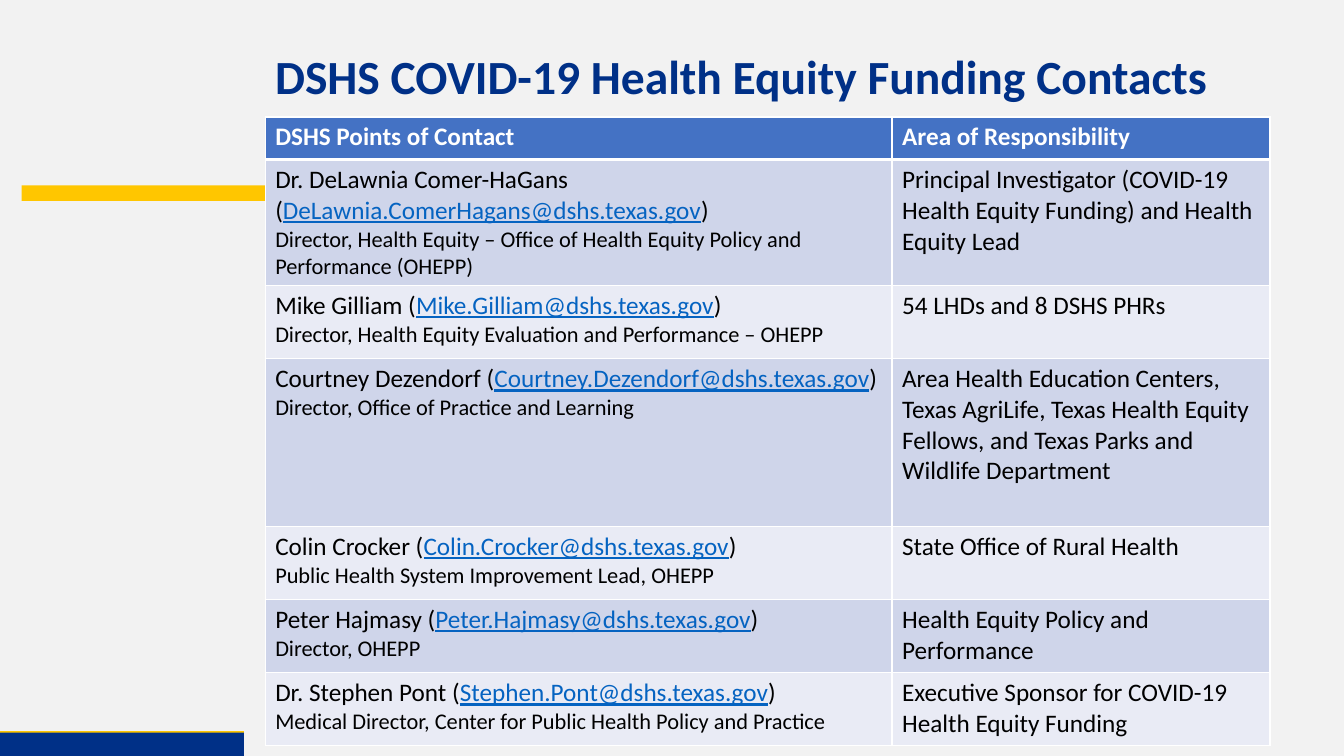
from lxml import etree
from pptx import Presentation
from pptx.dml.color import RGBColor
from pptx.enum import shapes, text
from pptx.oxml import ns
from pptx.util import Pt

COLORS = {
    "background": "F2F2F2", "navy": "003087", "gold": "FFC600",
    "header": "4472C4", "odd": "CFD5EA", "even": "E9EBF5",
    "link": "0563C1", "black": "000000", "white": "FFFFFF",
}
FONT = "Calibri"
HEADINGS = ("DSHS Points of Contact", "Area of Responsibility")

# Name, e-mail, role, area of responsibility
CONTACTS = [
    ("Dr. DeLawnia Comer-HaGans", "DeLawnia.ComerHagans@dshs.texas.gov",
     "Director, Health Equity – Office of Health Equity Policy and Performance (OHEPP)",
     "Principal Investigator (COVID-19 Health Equity Funding) and Health Equity Lead"),
    ("Mike Gilliam", "Mike.Gilliam@dshs.texas.gov",
     "Director, Health Equity Evaluation and Performance – OHEPP",
     "54 LHDs and 8 DSHS PHRs"),
    ("Courtney Dezendorf", "Courtney.Dezendorf@dshs.texas.gov",
     "Director, Office of Practice and Learning",
     "Area Health Education Centers, Texas AgriLife, Texas Health Equity Fellows, "
     "and Texas Parks and Wildlife Department"),
    ("Colin Crocker", "Colin.Crocker@dshs.texas.gov",
     "Public Health System Improvement Lead, OHEPP",
     "State Office of Rural Health"),
    ("Peter Hajmasy", "Peter.Hajmasy@dshs.texas.gov",
     "Director, OHEPP",
     "Health Equity Policy and Performance"),
    ("Dr. Stephen Pont", "Stephen.Pont@dshs.texas.gov",
     "Medical Director, Center for Public Health Policy and Practice",
     "Executive Sponsor for COVID-19 Health Equity Funding"),
]
COLUMN_WIDTHS = (447.8, 270)
ROW_HEIGHTS = (30.4, 90, 52.3, 119.7, 52.3, 52.3, 52.3)


def rgb(name):
    return RGBColor.from_string(COLORS[name])


def add_run(p, content, size=18, color="black", bold=False, underline=False):
    r = p.add_run()
    r.text = content
    f = r.font
    f.name, f.size, f.bold, f.underline = FONT, Pt(size), bold, underline
    f.color.rgb = rgb(color)


def add_block(s, kind, left, top, width, height, color):
    sp = s.shapes.add_shape(kind, Pt(left), Pt(top), Pt(width), Pt(height))
    sp.shadow.inherit = False
    sp.fill.solid()
    sp.fill.fore_color.rgb = rgb(color)
    sp.line.fill.background()


def add_rule(s, x1, y1, x2, y2, color, width):
    line = s.shapes.add_connector(shapes.MSO_CONNECTOR.STRAIGHT,
                                  Pt(x1), Pt(y1), Pt(x2), Pt(y2))
    line.line.color.rgb = rgb(color)
    line.line.width = Pt(width)
    etree.SubElement(line._element.spPr, ns.qn("a:effectLst"))


def add_title(s, content):
    sp = s.shapes.add_textbox(Pt(189.4), Pt(28.8), Pt(704.2), Pt(54.7))
    tf = sp.text_frame
    tf.word_wrap = True
    tf.vertical_anchor = text.MSO_ANCHOR.MIDDLE
    p = tf.paragraphs[0]
    p.line_spacing = 0.9
    add_run(p, content, 34, "navy", bold=True)


def style_cell(cell, color, top=1, bottom=1):
    cell.fill.solid()
    cell.fill.fore_color.rgb = rgb(color)
    # Borders come before the fill in the cell properties
    tc_pr = cell._tc.get_or_add_tcPr()
    borders = (("L", 1), ("R", 1), ("T", top), ("B", bottom))
    for i, (side, width) in enumerate(borders):
        ln = etree.Element(ns.qn(f"a:ln{side}"), w=str(Pt(width)))
        fill = etree.SubElement(ln, ns.qn("a:solidFill"))
        etree.SubElement(fill, ns.qn("a:srgbClr"), val=COLORS["white"])
        tc_pr.insert(i, ln)


def fill_contact(cell, name, email, role):
    tf = cell.text_frame
    p = tf.paragraphs[0]
    add_run(p, f"{name} (")
    add_run(p, email, color="link", underline=True)
    add_run(p, ")")
    add_run(tf.add_paragraph(), role, 16)


def add_contact_table(s):
    frame = s.shapes.add_table(len(ROW_HEIGHTS), len(COLUMN_WIDTHS),
                               Pt(189.4), Pt(83.5),
                               Pt(sum(COLUMN_WIDTHS)), Pt(sum(ROW_HEIGHTS)))
    table = frame.table
    for column, width in zip(table.columns, COLUMN_WIDTHS):
        column.width = Pt(width)
    for row, height in zip(table.rows, ROW_HEIGHTS):
        row.height = Pt(height)

    # Header row
    for col, heading in enumerate(HEADINGS):
        cell = table.cell(0, col)
        style_cell(cell, "header", bottom=3)
        add_run(cell.text_frame.paragraphs[0], heading, color="white", bold=True)

    # One row per contact
    for row, (name, email, role, area) in enumerate(CONTACTS, start=1):
        contact_cell, area_cell = table.cell(row, 0), table.cell(row, 1)
        for cell in (contact_cell, area_cell):
            style_cell(cell, "odd" if row % 2 else "even", top=3 if row == 1 else 1)
        fill_contact(contact_cell, name, email, role)
        add_run(area_cell.text_frame.paragraphs[0], area)


def main():
    prs = Presentation()
    prs.slide_width, prs.slide_height = Pt(960), Pt(540)
    s = prs.slides.add_slide(prs.slide_layouts[6])
    s.background.fill.solid()
    s.background.fill.fore_color.rgb = rgb("background")

    # Decorative bars
    add_block(s, shapes.MSO_SHAPE.PENTAGON, 15.4, 132.5, 878.4, 11, "gold")
    add_rule(s, 0, 523.4, 174.2, 523.4, "gold", 3)
    add_block(s, shapes.MSO_SHAPE.RECTANGLE, 0, 523.4, 174.2, 16.6, "navy")

    # Title and contacts
    add_title(s, "DSHS COVID-19 Health Equity Funding Contacts")
    add_contact_table(s)
    prs.save("out.pptx")


if __name__ == "__main__":
    main()
